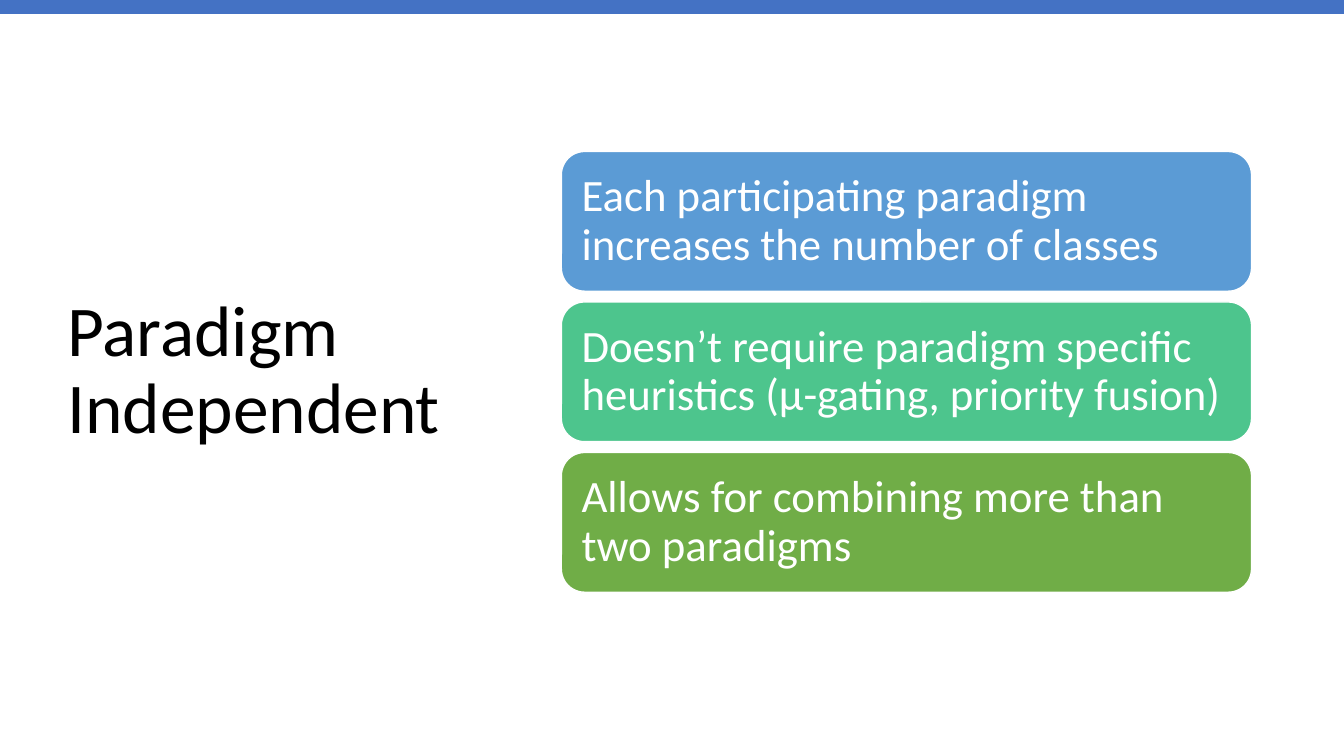
from dataclasses import dataclass
from pptx import Presentation
from pptx.dml.color import RGBColor
from pptx.enum.shapes import MSO_SHAPE
from pptx.enum.text import MSO_ANCHOR, PP_ALIGN
from pptx.util import Pt


@dataclass(frozen=True)
class Theme:
    font: str = "Calibri"
    black: str = "000000"
    white: str = "FFFFFF"
    bar: str = "4472C4"
    cards: tuple = ("5B9BD5", "4DC58D", "70AD47")
    title: int = 51
    body: int = 32


class Deck:
    def __init__(self, theme):
        self.theme = theme
        self.file = Presentation()
        self.file.slide_width, self.file.slide_height = Pt(960), Pt(540)
        self.slide = self.file.slides.add_slide(self.file.slide_layouts[6])

    def label(self, shape, text, size, color):
        frame = shape.text_frame
        frame.word_wrap = True
        frame.vertical_anchor = MSO_ANCHOR.MIDDLE
        para = frame.paragraphs[0]
        para.alignment = PP_ALIGN.LEFT
        para.line_spacing = 0.9
        run = para.add_run()
        run.text = text
        run.font.name = self.theme.font
        run.font.size = Pt(size)
        run.font.color.rgb = RGBColor.from_string(color)
        return frame

    def title(self, text, *box):
        shape = self.slide.shapes.add_textbox(*map(Pt, box))
        self.label(shape, text, self.theme.title, self.theme.black)

    def block(self, kind, fill, *box):
        shape = self.slide.shapes.add_shape(kind, *map(Pt, box))
        shape.shadow.inherit = False
        shape.fill.solid()
        shape.fill.fore_color.rgb = RGBColor.from_string(fill)
        shape.line.fill.background()
        return shape

    def card(self, text, fill, *box):
        shape = self.block(MSO_SHAPE.ROUNDED_RECTANGLE, fill, *box)
        shape.line.color.rgb = RGBColor.from_string(self.theme.white)
        shape.line.width = Pt(1)
        frame = self.label(shape, text, self.theme.body, self.theme.white)
        frame.margin_left = frame.margin_right = Pt(9.6)
        frame.margin_top = frame.margin_bottom = Pt(9.6)


def main():
    theme = Theme()
    deck = Deck(theme)

    # Title and top bar
    deck.title("Paradigm Independent", 41, 49, 299.5, 433.4)
    deck.block(MSO_SHAPE.RECTANGLE, theme.bar, 0, 0, 960, 9.9)

    # Stack of benefit cards
    texts = (
        "Each participating paradigm increases the number of classes",
        "Doesn’t require paradigm specific heuristics (µ-gating, priority fusion)",
        "Allows for combining more than two paradigms",
    )
    top, height, step = 108.2, 99.8, 107.5
    for i, (text, fill) in enumerate(zip(texts, theme.cards)):
        deck.card(text, fill, 401, top + i * step, 493, height)

    deck.file.save("out.pptx")


if __name__ == "__main__":
    main()
